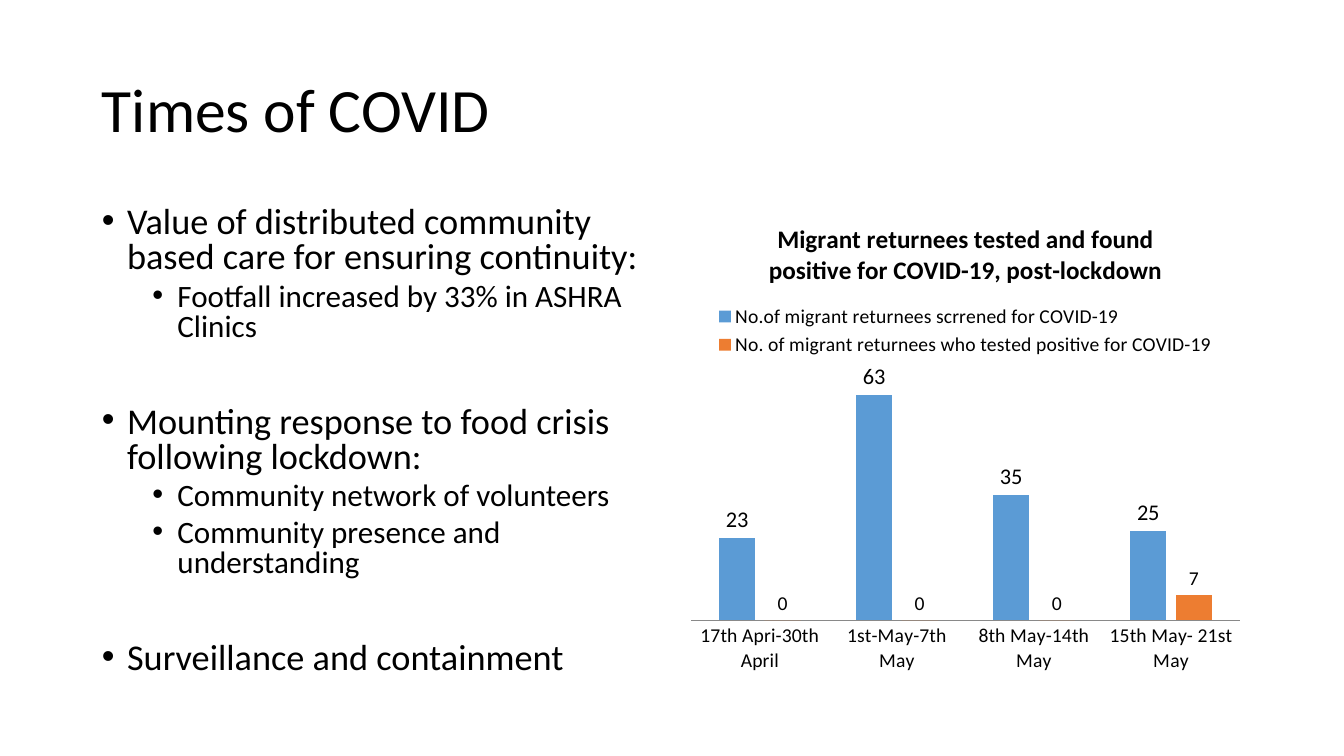
"""Build a slide with a bullet list and a column chart on COVID response."""
from lxml.etree import SubElement as Sub
from pptx import Presentation
from pptx.chart.data import CategoryChartData as Data
from pptx.dml.color import RGBColor as Rgb
from pptx.enum.chart import XL_CHART_TYPE as Kind, XL_LABEL_POSITION as Spot
from pptx.enum.chart import XL_LEGEND_POSITION as Side, XL_TICK_MARK as Tick
from pptx.enum.text import MSO_ANCHOR as Anchor
from pptx.oxml.ns import qn
from pptx.util import Emu, Pt

COLORS = {"text": "000000", "blue": "5B9BD5", "orange": "ED7D31", "axis": "898989"}
FONT = "Calibri"
SCALE = 12192000 / 1344


def px(n):
    return Emu(round(n * SCALE))


def color(name):
    return Rgb.from_string(COLORS[name])


class Deck:
    def __init__(self):
        self.prs = Presentation()
        self.prs.slide_width, self.prs.slide_height = px(1344), px(756)
        self.slide = self.prs.slides.add_slide(self.prs.slide_layouts[6])

    def style(self, font, size, bold=False):
        font.name, font.size, font.bold = FONT, Pt(size), bold
        font.color.rgb = color("text")

    def frame(self, box):
        frame = self.slide.shapes.add_textbox(*map(px, box)).text_frame
        frame.word_wrap = True
        return frame

    def title(self, text, box):
        frame = self.frame(box)
        frame.vertical_anchor = Anchor.MIDDLE
        para = frame.paragraphs[0]
        para.text, para.line_spacing = text, 0.9
        self.style(para.font, 44)

    def bullets(self, items, box):
        frame = self.frame(box)
        for i, (level, before, text) in enumerate(items):
            para = frame.add_paragraph() if i else frame.paragraphs[0]
            para.text, para.level = text, level
            para.line_spacing, para.space_before = 0.8, Pt(before)
            props = para._p.get_or_add_pPr()
            props.set("marL", str(228600 + level * 457200))
            props.set("indent", "-228600")
            Sub(props, qn("a:buFont"), typeface="Arial")
            Sub(props, qn("a:buChar"), char="•")
            self.style(para.font, 22.2 if level else 25.9)

    def chart(self, title, cats, series, box):
        data = Data()
        data.categories = cats
        for name, vals, *_ in series:
            data.add_series(name, vals)
        kind = Kind.COLUMN_CLUSTERED
        chart = self.slide.shapes.add_chart(kind, *map(px, box), data).chart
        self.style(chart.font, 10)
        chart.has_title = True
        head = chart.chart_title
        head.include_in_layout = False
        para = head.text_frame.paragraphs[0]
        para.text = title
        self.style(para.font, 18, True)
        chart.has_legend = True
        chart.legend.position = Side.TOP
        chart.legend.include_in_layout = False
        self.style(chart.legend.font, 14)
        axis = chart.category_axis
        axis.major_tick_mark = axis.minor_tick_mark = Tick.NONE
        axis.format.line.color.rgb = color("axis")
        self.style(axis.tick_labels.font, 14)
        chart.value_axis.visible = False
        chart.value_axis.has_major_gridlines = False
        plot = chart.plots[0]
        plot.gap_width, plot.overlap, plot.vary_by_categories = 150, -25, False
        for bars, (*_, hue, size) in zip(plot.series, series):
            bars.format.fill.solid()
            bars.format.fill.fore_color.rgb = color(hue)
            labels = bars.data_labels
            labels.show_value, labels.position = True, Spot.OUTSIDE_END
            self.style(labels.font, size)


def main():
    deck = Deck()
    deck.title("Times of COVID", (92, 40, 1159, 146))
    deck.bullets([
        (0, 0, "Value of distributed community based care for ensuring continuity:"),
        (1, 5, "Footfall increased by 33% in ASHRA Clinics"),
        (0, 45, "Mounting response to food crisis following lockdown:"),
        (1, 5, "Community network of volunteers"),
        (1, 5, "Community presence and understanding"),
        (0, 45, "Surveillance and containment"),
    ], (92, 202, 571, 480))
    deck.chart(
        "Migrant returnees tested and found positive for COVID-19, post-lockdown",
        ["17th Apri-30th April", "1st-May-7th May", "8th May-14th May",
         "15th May- 21st May"],
        [("No.of migrant returnees scrrened for COVID-19",
          (23, 63, 35, 25), "blue", 16),
         ("No. of migrant returnees who tested positive for COVID-19",
          (0, 0, 0, 7), "orange", 14)],
        (680, 202, 571, 480))
    deck.prs.save("out.pptx")


if __name__ == "__main__":
    main()
